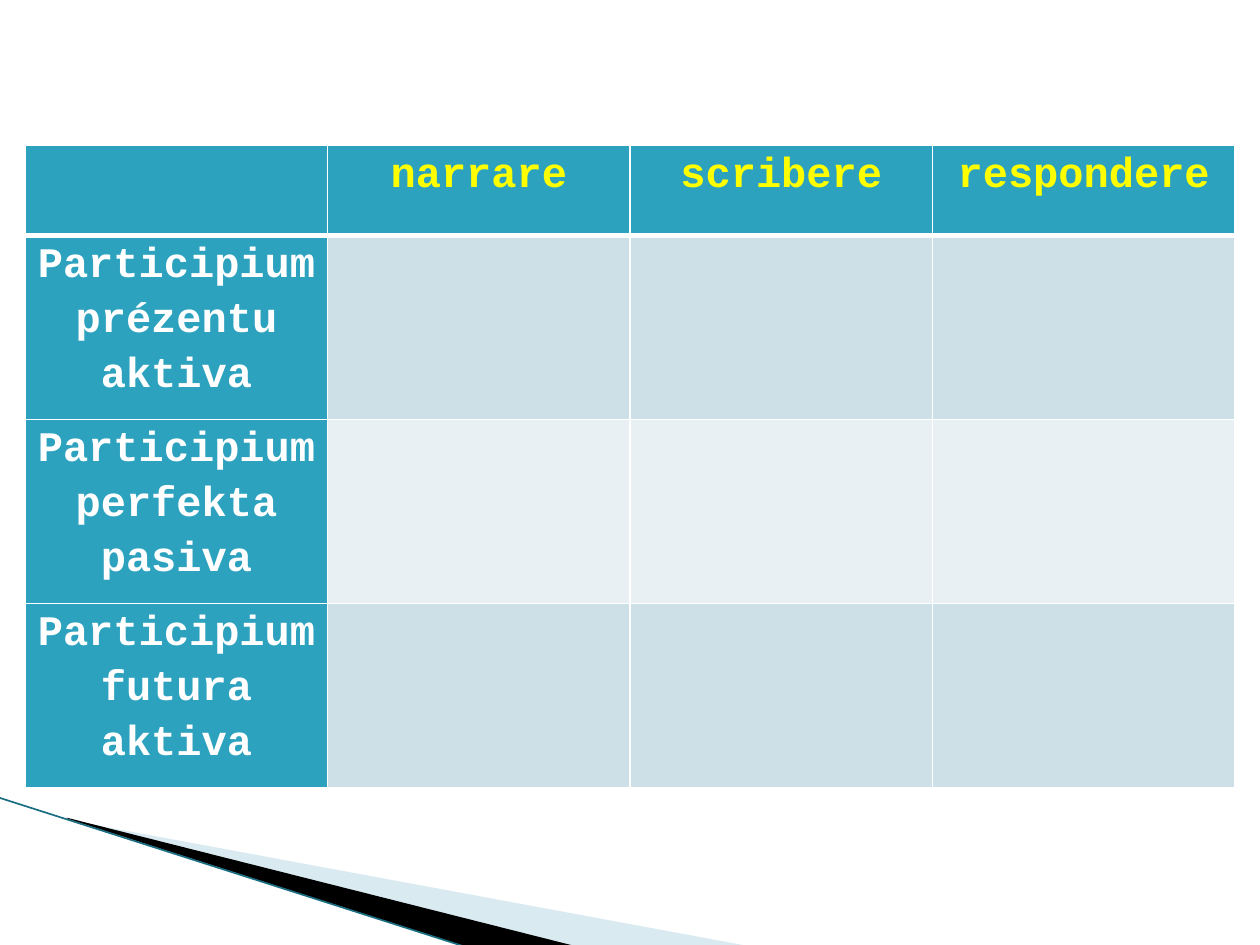
from lxml import etree
from pptx import Presentation
from pptx import util as u
from pptx.dml.color import RGBColor
from pptx.enum import shapes, text
from pptx.oxml.ns import qn

Inches = u.Inches
TEAL, WHITE, YELLOW = "2DA2BF", "FFFFFF", "FFFF00"
BANDS = ("CDE0E8", "E8F0F4")
VERBS = ("narrare", "scribere", "respondere")
PARTICIPLES = (
    "Participium prézentu aktiva",
    "Participium perfekta pasiva",
    "Participium futura aktiva",
)


def rgb(value):
    return RGBColor.from_string(value)


def add_wedge(s, left, top, points, color, alpha=None):
    pts = [(Inches(left + x), Inches(top + y)) for x, y in points]
    builder = s.shapes.build_freeform(*pts[0])
    builder.add_line_segments(pts[1:], close=True)
    sp = builder.convert_to_shape()
    sp.shadow.inherit = False
    sp.fill.solid()
    sp.fill.fore_color.rgb = rgb(color)
    sp.line.fill.background()
    if alpha:
        clr = sp.fill._xPr.find(qn("a:solidFill"))[0]
        etree.SubElement(clr, qn("a:alpha")).set("val", str(alpha * 1000))


def add_corner(s, left, top):
    add_wedge(s, left, top, [(0.55, 0.18), (5.95, 1.18), (4.56, 1.18), (0.55, 0.17)],
              "A0CBDC", 40)
    add_wedge(s, left, top, [(0.53, 0.16), (4.57, 1.18), (3.72, 1.19), (0.54, 0.17)],
              "000000")
    line = s.shapes.add_connector(
        shapes.MSO_CONNECTOR.STRAIGHT, Inches(left - 0.01), Inches(top),
        Inches(left + 3.71), Inches(top + 1.19))
    line.line.color.rgb = rgb("1B6E82")
    line.line.width = u.Pt(0.95)
    etree.SubElement(line._element.spPr, qn("a:effectLst"))


def set_borders(cell, bottom, top):
    tc_pr = cell._tc.get_or_add_tcPr()
    widths = (("a:lnL", 1), ("a:lnR", 1), ("a:lnT", top), ("a:lnB", bottom))
    for i, (tag, width) in enumerate(widths):
        ln = etree.Element(qn(tag), w=str(u.Pt(width)))
        fill = etree.SubElement(ln, qn("a:solidFill"))
        etree.SubElement(fill, qn("a:srgbClr")).set("val", WHITE)
        tc_pr.insert(i, ln)


def set_text(cell, words, color):
    cell.margin_left = cell.margin_right = Inches(0.07)
    cell.margin_top = cell.margin_bottom = 0
    p = cell.text_frame.paragraphs[0]
    p.alignment = text.PP_ALIGN.CENTER
    p.line_spacing = 1.15
    r = p.add_run()
    r.text = words
    r.font.name = "Courier New"
    r.font.size = u.Pt(24)
    r.font.bold = True
    r.font.color.rgb = rgb(color)


def add_participle_table(s, left, top, width, header_height, row_height):
    rows, cols = len(PARTICIPLES) + 1, len(VERBS) + 1
    height = header_height + row_height * len(PARTICIPLES)
    table = s.shapes.add_table(rows, cols, Inches(left), Inches(top),
                               Inches(width), Inches(height)).table
    table.first_col = True
    for i, row in enumerate(table.rows):
        row.height = Inches(row_height if i else header_height)
        for j, cell in enumerate(row.cells):
            heading = i == 0 or j == 0
            cell.fill.solid()
            cell.fill.fore_color.rgb = rgb(TEAL if heading else BANDS[(i - 1) % 2])
            set_borders(cell, bottom=1 if i else 3, top=3 if i == 1 else 1)
    for j, verb in enumerate(VERBS, 1):
        set_text(table.cell(0, j), verb, YELLOW)
    for i, participle in enumerate(PARTICIPLES, 1):
        set_text(table.cell(i, 0), participle, WHITE)


def main():
    prs = Presentation()
    prs.slide_width, prs.slide_height = Inches(10), Inches(7.5)
    s = prs.slides.add_slide(prs.slide_layouts[6])
    add_corner(s, 0, 6.33)
    add_participle_table(s, 0.2, 1.15, 9.6, 0.72, 1.46)
    prs.save("out.pptx")


if __name__ == "__main__":
    main()
